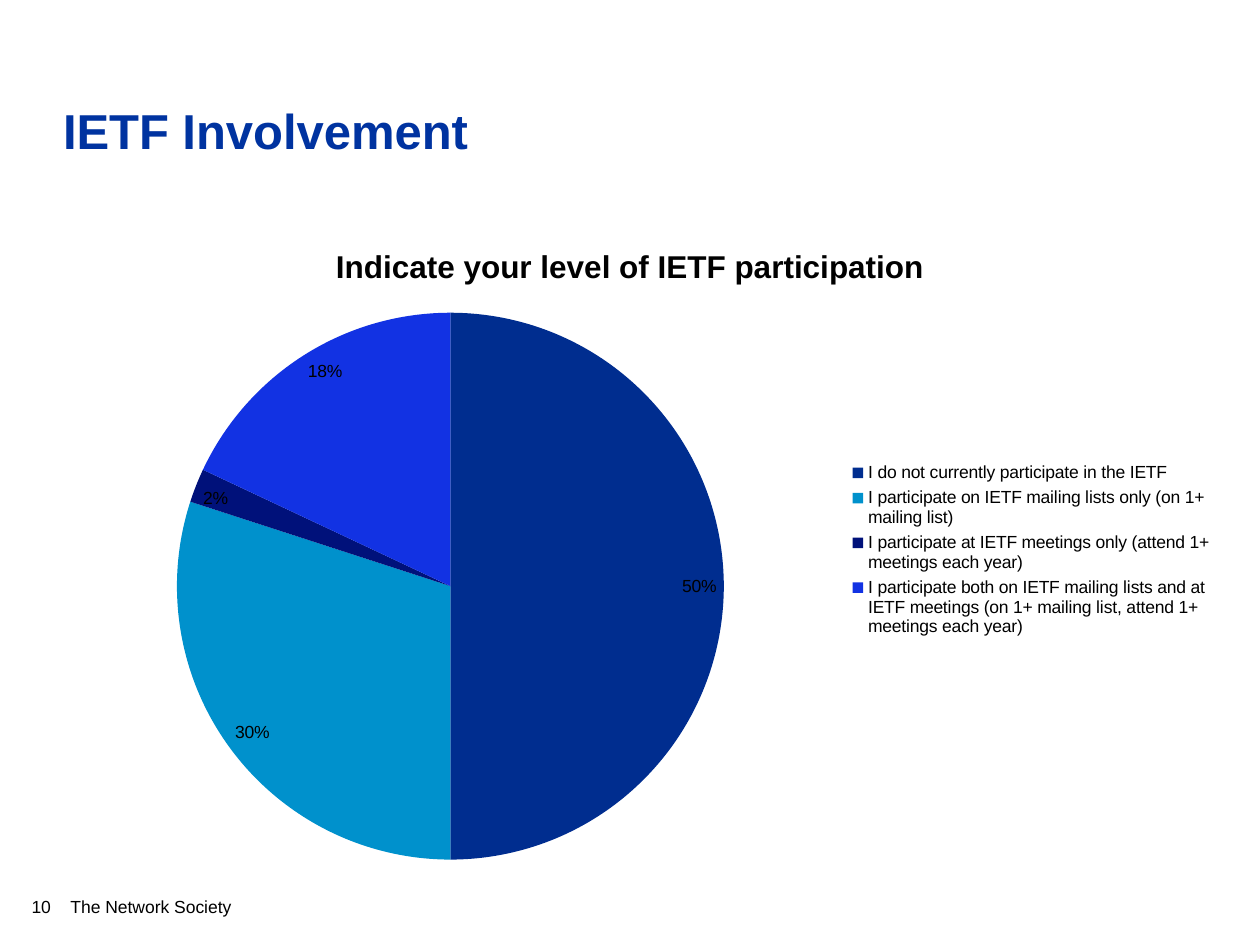
from lxml.etree import SubElement
from pptx import Presentation
from pptx.chart.data import CategoryChartData
from pptx.dml.color import RGBColor
from pptx.enum.chart import XL_CHART_TYPE, XL_LABEL_POSITION, XL_LEGEND_POSITION
from pptx.enum.text import MSO_ANCHOR, PP_ALIGN
from pptx.oxml.ns import qn
from pptx.util import Inches, Pt

FONT = "Arial"
WIDTH, HEIGHT = 10, 7.5
MARGIN = 0.25
QUESTION = "Indicate your level of IETF participation"
ANSWERS = [
    ("I do not currently participate in the IETF", 0.50, "002D8F"),
    ("I participate on IETF mailing lists only (on 1+ mailing list)", 0.30, "0091CC"),
    ("I participate at IETF meetings only (attend 1+ meetings each year)", 0.02, "00117A"),
    ("I participate both on IETF mailing lists and at IETF meetings "
     "(on 1+ mailing list, attend 1+ meetings each year)", 0.18, "1232E3"),
]


def color(value):
    return RGBColor.from_string(value)


def style_font(font, size, value="000000", bold=False):
    font.name = FONT
    font.size = Pt(size)
    font.bold = bold
    font.color.rgb = color(value)


def set_frame(tf, anchor, top, bottom):
    tf.vertical_anchor = anchor
    tf.margin_left = tf.margin_right = Inches(MARGIN)
    tf.margin_top, tf.margin_bottom = Inches(top), Inches(bottom)


def place(sp, left, top, width, height):
    sp.left, sp.top = Inches(left), Inches(top)
    sp.width, sp.height = Inches(width), Inches(height)


def add_title(slide, text):
    sp = slide.shapes.title
    place(sp, MARGIN, MARGIN, WIDTH - 2 * MARGIN, 1)
    tf = sp.text_frame
    tf.text = text
    tf.word_wrap = True
    set_frame(tf, MSO_ANCHOR.TOP, 0.6, 0)
    p = tf.paragraphs[0]
    p.alignment = PP_ALIGN.LEFT
    p.line_spacing = 0.9
    style_font(p.font, 28, "0033A0", True)


def add_footer(slide, text, left, width):
    height = 0.48
    sp = slide.shapes.add_textbox(
        Inches(left), Inches(HEIGHT - height), Inches(width), Inches(height))
    tf = sp.text_frame
    tf.text = text
    tf.word_wrap = False
    set_frame(tf, MSO_ANCHOR.BOTTOM, 0.05, 0.22)
    style_font(tf.paragraphs[0].font, 10)


def set_layout(parent, x, y, w, h, inner=False):
    layout = parent.get_or_add_layout() if hasattr(parent, "get_or_add_layout") else parent.find(qn("c:layout"))
    if layout is None:
        layout = SubElement(parent, qn("c:layout"))
        parent.insert(0, layout)
    for child in list(layout):
        layout.remove(child)
    manual = SubElement(layout, qn("c:manualLayout"))
    settings = [("xMode", "edge"), ("yMode", "edge"), ("x", x), ("y", y), ("w", w), ("h", h)]
    if inner:
        settings.insert(0, ("layoutTarget", "inner"))
    for name, value in settings:
        SubElement(manual, qn("c:" + name)).set("val", str(value))


def add_pie(slide, question, answers):
    data = CategoryChartData(number_format="0%")
    data.categories = [text for text, _, _ in answers]
    data.add_series(question, [share for _, share, _ in answers])
    chart = slide.shapes.add_chart(
        XL_CHART_TYPE.PIE, Inches(MARGIN), Inches(1.75),
        Inches(WIDTH - 2 * MARGIN), Inches(5.23), data).chart
    style_font(chart.font, 10)

    chart.has_title = True
    tf = chart.chart_title.text_frame
    tf.text = question
    style_font(tf.paragraphs[0].font, 18, bold=True)

    chart.has_legend = True
    legend = chart.legend
    legend.position = XL_LEGEND_POSITION.RIGHT
    legend.include_in_layout = False
    style_font(legend.font, 10)

    plot = chart.plots[0]
    plot.vary_by_categories = True
    plot.has_data_labels = True
    labels = plot.data_labels
    labels.show_percentage = True
    labels.show_value = False
    labels.number_format = "0%"
    labels.number_format_is_linked = False
    labels.position = XL_LABEL_POSITION.INSIDE_END
    style_font(labels.font, 10)

    for i, (_, _, value) in enumerate(answers):
        fill = plot.series[0].points[i].format.fill
        fill.solid()
        fill.fore_color.rgb = color(value)

    plot_area = chart.element.find(".//" + qn("c:plotArea"))
    set_layout(plot_area, 0.12, 0.14, 0.46, 0.83, inner=True)
    set_layout(chart.element.find(".//" + qn("c:legend")), 0.68, 0.36, 0.31, 0.28)


def main():
    prs = Presentation()
    prs.slide_width, prs.slide_height = Inches(WIDTH), Inches(HEIGHT)
    slide = prs.slides.add_slide(prs.slide_layouts[5])
    add_footer(slide, "The Network Society", 0.31, 2)
    add_title(slide, "IETF Involvement")
    add_pie(slide, QUESTION, ANSWERS)
    add_footer(slide, "10", 0, 0.68)
    prs.save("out.pptx")


if __name__ == "__main__":
    main()
